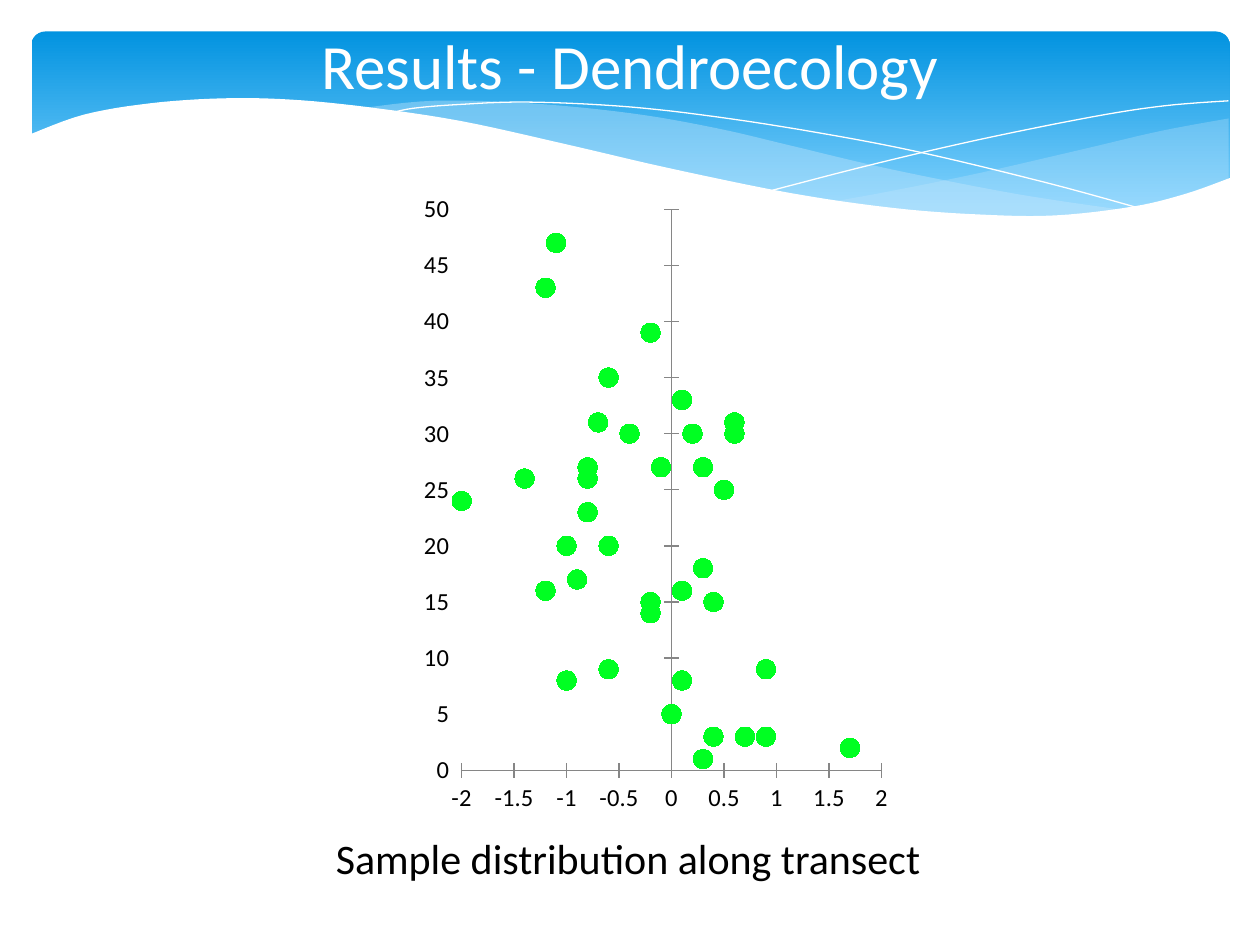
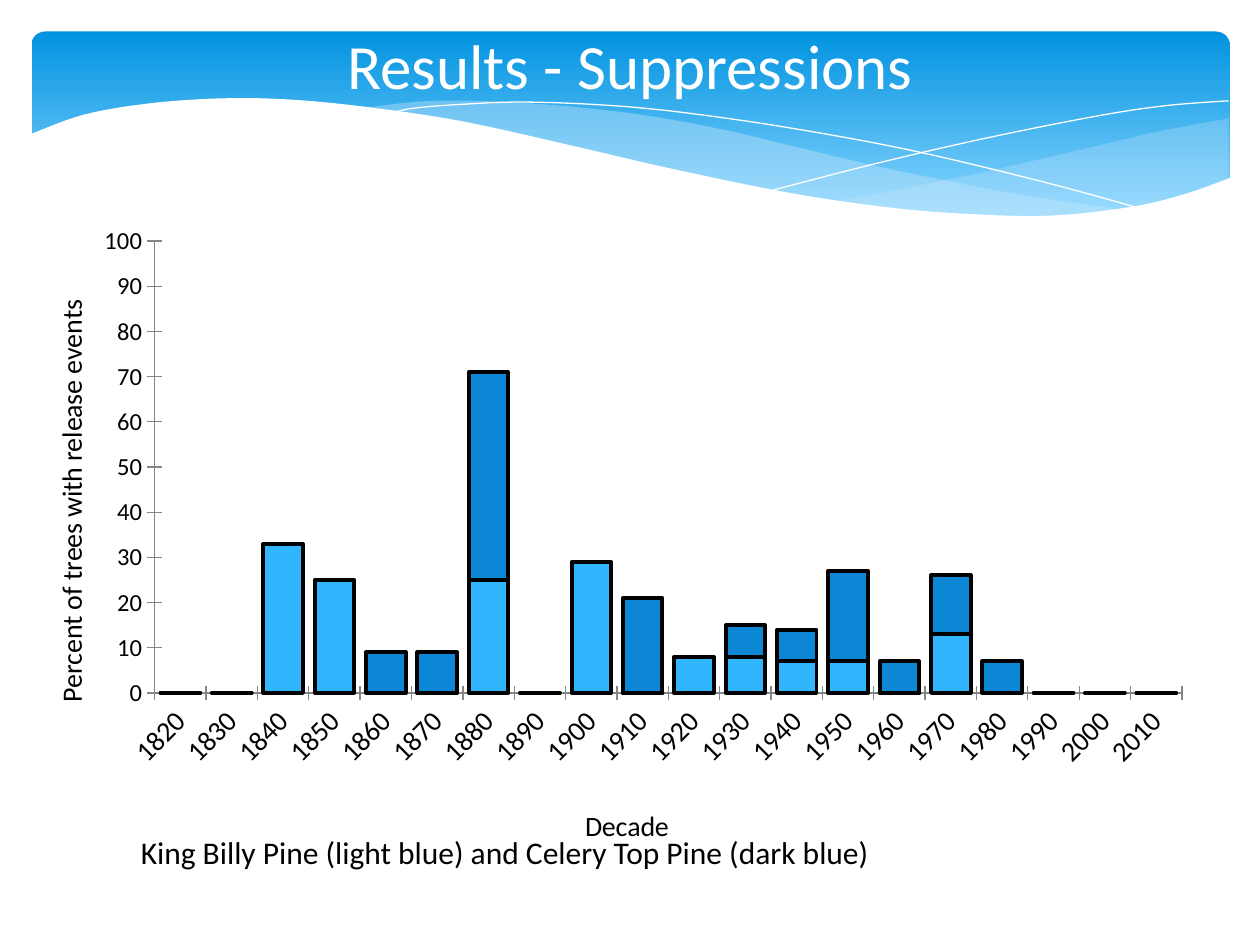
from dataclasses import dataclass
from typing import Optional

from lxml.etree import SubElement
from pptx import Presentation
from pptx.chart.chart import Chart
from pptx.chart.data import CategoryChartData, XyChartData
from pptx.dml.color import RGBColor
from pptx.enum.chart import XL_CHART_TYPE, XL_MARKER_STYLE, XL_TICK_LABEL_POSITION, XL_TICK_MARK
from pptx.enum.shapes import MSO_SHAPE
from pptx.enum.text import MSO_ANCHOR, PP_ALIGN
from pptx.oxml import parse_xml
from pptx.oxml.ns import nsdecls, qn
from pptx.slide import Slide
from pptx.util import Pt

FONT = "Calibri"
COLORS = {
    "band top": "0293E0",
    "band bottom": "83D3FE",
    "swell": "C6E7FC",
    "white": "FFFFFF",
    "text": "000000",
    "axis": "868686",
    "sample": "00FF22",
    "king billy": "31B6FD",
    "celery top": "0B87D6",
}

Point = tuple[float, float]
Box = tuple[float, float, float, float]


@dataclass(frozen=True)
class Wave:
    """Smooth curves joined end to end, in points; without a fill it is a thin line."""
    curves: list[list[Point]]
    fill: Optional[str] = None
    opacity: int = 100


@dataclass(frozen=True)
class AxisFormat:
    font_size: int
    minimum: Optional[float] = None
    maximum: Optional[float] = None
    major_unit: Optional[float] = None


WAVES = [
    Wave([[(702, 67.7), (663, 74.9), (620, 85), (561, 98.6), (508, 109.4), (476, 115.2)],
          [(476, 115.2), (518, 120.2), (562, 123.8), (601, 123.8), (640, 119.5),
           (673, 112.3), (702, 102.2)]], "swell", 29),
    Wave([[(643, 120.2), (581, 110.9), (508, 96.5), (453, 83.5), (410, 73.4), (361, 64.8),
           (302, 59), (248, 57.6), (206, 61.9)],
          [(206, 61.9), (261, 69.8), (323, 83.5), (382, 97.2), (433, 108), (490, 117.4),
           (539, 122.4), (589, 124.6), (643, 120.2)]], "swell", 40),
    Wave([[(222.5, 64.8), (236, 61.9), (261, 59.8), (300, 58.3), (352, 60.5), (400, 65.5),
           (458, 74.2), (523, 86.4), (598, 104.4), (653, 119.5)]]),
    Wave([[(441.4, 108.7), (500, 93.6), (559, 79.9), (623, 67), (665, 60.5), (702, 57.6)]]),
    Wave([[(703.4, 101.5), (677, 110.9), (647, 118.1), (603, 123.1), (560, 122.6),
           (510, 118.8), (451, 110.2), (381, 95.8), (322, 82.1), (263, 69.1), (210, 61.2),
           (166, 56.9), (127, 56.2), (86, 59), (48, 65.5), (16.6, 77)],
          [(16.6, 161.3), (703.4, 161.3)]], "white"),
]

SAMPLES = [
    (0.3, 1), (1.7, 2), (0.9, 3), (0.7, 3), (0.4, 3), (0, 5), (0.1, 8), (0.9, 9),
    (-1, 8), (-0.6, 9), (-0.2, 14), (0.4, 15), (-0.2, 15), (-1.2, 16), (0.1, 16),
    (-0.9, 17), (0.3, 18), (-1, 20), (-0.6, 20), (-0.8, 23), (-2.1, 23), (-2, 24),
    (0.5, 25), (-1.4, 26), (-0.8, 27), (-0.8, 26), (-0.1, 27), (0.3, 27), (-0.4, 30),
    (0.2, 30), (0.6, 30), (-0.7, 31), (0.6, 31), (0.1, 33), (-0.6, 35), (-0.2, 39),
    (-1.2, 43), (-1.1, 47),
]
DECADES = [str(year) for year in range(1820, 2011, 10)]
SUPPRESSIONS = {
    "king billy": [0, 0, 33, 25, 0, 0, 25, 0, 29, 0, 8, 8, 7, 7, 0, 13, 0, 0, 0, 0],
    "celery top": [0, 0, 0, 0, 9, 9, 46, 0, 0, 21, 0, 7, 7, 20, 7, 13, 7, 0, 0, 0],
}


def color(name: str) -> RGBColor:
    return RGBColor.from_string(COLORS[name])


def set_text(text_frame, text: str, *, size: float, color_name: str = "text",
             align: Optional[PP_ALIGN] = None) -> None:
    text_frame.word_wrap = True
    paragraph = text_frame.paragraphs[0]
    paragraph.alignment = align
    run = paragraph.add_run()
    run.text = text
    format_font(run.font, size, color_name)


def format_font(font, size: float, color_name: str = "text") -> None:
    font.name, font.size, font.bold = FONT, Pt(size), False
    font.color.rgb = color(color_name)


def smooth(knots: list[Point], steps: int = 6) -> list[Point]:
    """Catmull-Rom curve through the knots."""
    if len(knots) < 3:
        return knots
    padded = [knots[0], *knots, knots[-1]]
    curve = [knots[0]]
    for before, start, end, after in zip(padded, padded[1:], padded[2:], padded[3:]):
        for step in range(1, steps + 1):
            t = step / steps
            curve.append(tuple(
                b + ((c - a) * t + (2 * a - 5 * b + 4 * c - d) * t ** 2
                     + (3 * b - a - 3 * c + d) * t ** 3) / 2
                for a, b, c, d in zip(before, start, end, after)))
    return curve


def draw_wave(slide: Slide, wave: Wave):
    points = [(Pt(x), Pt(y)) for knots in wave.curves for x, y in smooth(knots)]
    builder = slide.shapes.build_freeform(*points[0])
    builder.add_line_segments(points[1:], close=wave.fill is not None)
    shape = builder.convert_to_shape()
    shape.shadow.inherit = False
    if wave.fill is None:
        shape.fill.background()
        shape.line.color.rgb = color("white")
        shape.line.width = Pt(0)
        return shape
    shape.line.fill.background()
    shape.fill.solid()
    shape.fill.fore_color.rgb = color(wave.fill)
    if wave.opacity < 100:
        fill_color = shape.element.xpath("./p:spPr/a:solidFill/a:srgbClr")[0]
        SubElement(fill_color, qn("a:alpha"), val=str(wave.opacity * 1000))
    return shape


def draw_band(slide: Slide):
    band = slide.shapes.add_shape(
        MSO_SHAPE.ROUNDED_RECTANGLE, Pt(18), Pt(18), Pt(684.7), Pt(112.3))
    band.adjustments[0] = 0.07
    band.shadow.inherit = False
    band.line.fill.background()
    band.fill.gradient()
    band.fill.gradient_angle = 270
    top, bottom = band.fill.gradient_stops
    top.color.rgb, top.position = color("band top"), 0
    bottom.color.rgb, bottom.position = color("band bottom"), 0.9
    return band


def decorate_layout(layout, slide: Slide) -> None:
    """Draw the header on a slide, then move it to the layout all slides share."""
    for placeholder in list(layout.placeholders):
        if placeholder.placeholder_format.idx:
            layout.shapes.element.remove(placeholder.element)
    header = [draw_band(slide), *(draw_wave(slide, wave) for wave in WAVES)]
    for shape in header:
        layout.shapes.element.append(shape.element)


def set_title(slide: Slide, text: str) -> None:
    title = slide.shapes.title
    title.left, title.top, title.width, title.height = Pt(36), Pt(11.5), Pt(648), Pt(98.6)
    title.text_frame.vertical_anchor = MSO_ANCHOR.TOP
    set_text(title.text_frame, text, size=36, color_name="white", align=PP_ALIGN.CENTER)


def add_caption(slide: Slide, text: str, box: Box, *, size: float,
                align: Optional[PP_ALIGN] = None) -> None:
    caption = slide.shapes.add_textbox(*map(Pt, box))
    set_text(caption.text_frame, text, size=size, align=align)


def set_layout(parent, index: int, **fractions: float) -> None:
    """Place a chart part by fractions of the chart area."""
    for old in parent.findall(qn("c:layout")):
        parent.remove(old)
    layout = parse_xml(f"<c:layout {nsdecls('c')}><c:manualLayout/></c:layout>")
    values = {"xMode": "edge", "yMode": "edge", **fractions}
    if "w" in fractions:
        values = {"layoutTarget": "inner", **values}
    for name, value in values.items():
        SubElement(layout[0], qn(f"c:{name}"), val=str(value))
    parent.insert(index, layout)


def add_chart(slide: Slide, kind: XL_CHART_TYPE, box: Box, data, plot_box: Box) -> Chart:
    chart = slide.shapes.add_chart(kind, *map(Pt, box), data).chart
    chart.has_legend = chart.has_title = False
    format_font(chart.font, 10)
    chart.element.find(qn("c:chart")).addnext(parse_xml(
        f"<c:spPr {nsdecls('c', 'a')}><a:noFill/><a:ln><a:noFill/></a:ln></c:spPr>"))
    plot_area = chart.element.xpath("./c:chart/c:plotArea")[0]
    set_layout(plot_area, 0, **dict(zip("xywh", plot_box)))
    chart.plots[0].vary_by_categories = False
    return chart


def format_axis(axis, style: AxisFormat) -> None:
    axis.has_major_gridlines = False
    axis.major_tick_mark = XL_TICK_MARK.CROSS
    axis.minor_tick_mark = XL_TICK_MARK.NONE
    axis.format.line.color.rgb = color("axis")
    axis.format.line.width = Pt(0.75)
    format_font(axis.tick_labels.font, style.font_size)
    if style.minimum is not None:
        axis.minimum_scale = style.minimum
    if style.maximum is not None:
        axis.maximum_scale = style.maximum
    if style.major_unit is not None:
        axis.major_unit = style.major_unit


def set_axis_title(axis, text: str, *, x: float, y: float, rotation: int = 0) -> None:
    title = axis.axis_title
    set_text(title.text_frame, text, size=16)
    body = title.element.xpath("./c:tx/c:rich/a:bodyPr")[0]
    body.set("rot", str(rotation * 60000))
    body.set("vert", "horz")
    set_layout(title.element, 1, x=x, y=y)


def build_dendroecology(slide: Slide) -> None:
    set_title(slide, "Results - Dendroecology")
    data = XyChartData(number_format="General")
    series_data = data.add_series("Series 1")
    for x, y in SAMPLES:
        series_data.add_data_point(x, y)
    chart = add_chart(slide, XL_CHART_TYPE.XY_SCATTER, (236.2, 103, 275.8, 368.6), data,
                      (0.1, 0.045, 0.87, 0.87))
    format_axis(chart.category_axis, AxisFormat(14, -2, 2, 0.5))
    format_axis(chart.value_axis, AxisFormat(14, 0, 50, 5))
    chart.value_axis.tick_label_position = XL_TICK_LABEL_POSITION.LOW
    series = chart.plots[0].series[0]
    series.format.line.fill.background()
    marker = series.marker
    marker.style, marker.size = XL_MARKER_STYLE.CIRCLE, 11
    marker.format.fill.solid()
    marker.format.fill.fore_color.rgb = color("sample")
    marker.format.line.color.rgb = color("sample")
    add_caption(slide, "Sample distribution along transect", (67.7, 472.3, 582.5, 36),
                size=24, align=PP_ALIGN.CENTER)


def build_suppressions(slide: Slide) -> None:
    set_title(slide, "Results - Suppressions")
    data = CategoryChartData(number_format="0")
    data.categories = DECADES
    for number, values in enumerate(SUPPRESSIONS.values(), start=1):
        data.add_series(f"Series {number}", values)
    chart = add_chart(slide, XL_CHART_TYPE.COLUMN_STACKED, (6.5, 121.7, 682.6, 365.8), data,
                      (0.12, 0.044, 0.86, 0.706))
    plot = chart.plots[0]
    plot.gap_width, plot.overlap = 30, 100
    for series, name in zip(plot.series, SUPPRESSIONS):
        series.format.fill.solid()
        series.format.fill.fore_color.rgb = color(name)
        series.format.line.color.rgb = color("text")
        series.format.line.width = Pt(2.25)
    format_axis(chart.category_axis, AxisFormat(16))
    format_axis(chart.value_axis, AxisFormat(14, 0, 100, 10))
    chart.value_axis.tick_labels.number_format = "0"
    chart.value_axis.tick_labels.number_format_is_linked = False
    label_body = chart.element.xpath(".//c:catAx/c:txPr/a:bodyPr")[0]
    label_body.set("rot", str(-45 * 60000))
    set_axis_title(chart.category_axis, "Decade", x=0.476, y=0.92)
    set_axis_title(chart.value_axis, "Percent of trees with release events",
                   x=0.03, y=0.128, rotation=-90)
    add_caption(slide, "King Billy Pine (light blue) and Celery Top Pine (dark blue)",
                (73.4, 472.3, 556.6, 28.8), size=18)


def main() -> None:
    presentation = Presentation()
    presentation.slide_width, presentation.slide_height = Pt(720), Pt(540)
    layout = presentation.slide_layouts.get_by_name("Title Only")
    slides = [presentation.slides.add_slide(layout) for _ in range(2)]
    decorate_layout(layout, slides[0])
    build_dendroecology(slides[0])
    build_suppressions(slides[1])
    presentation.save("out.pptx")


if __name__ == "__main__":
    main()
